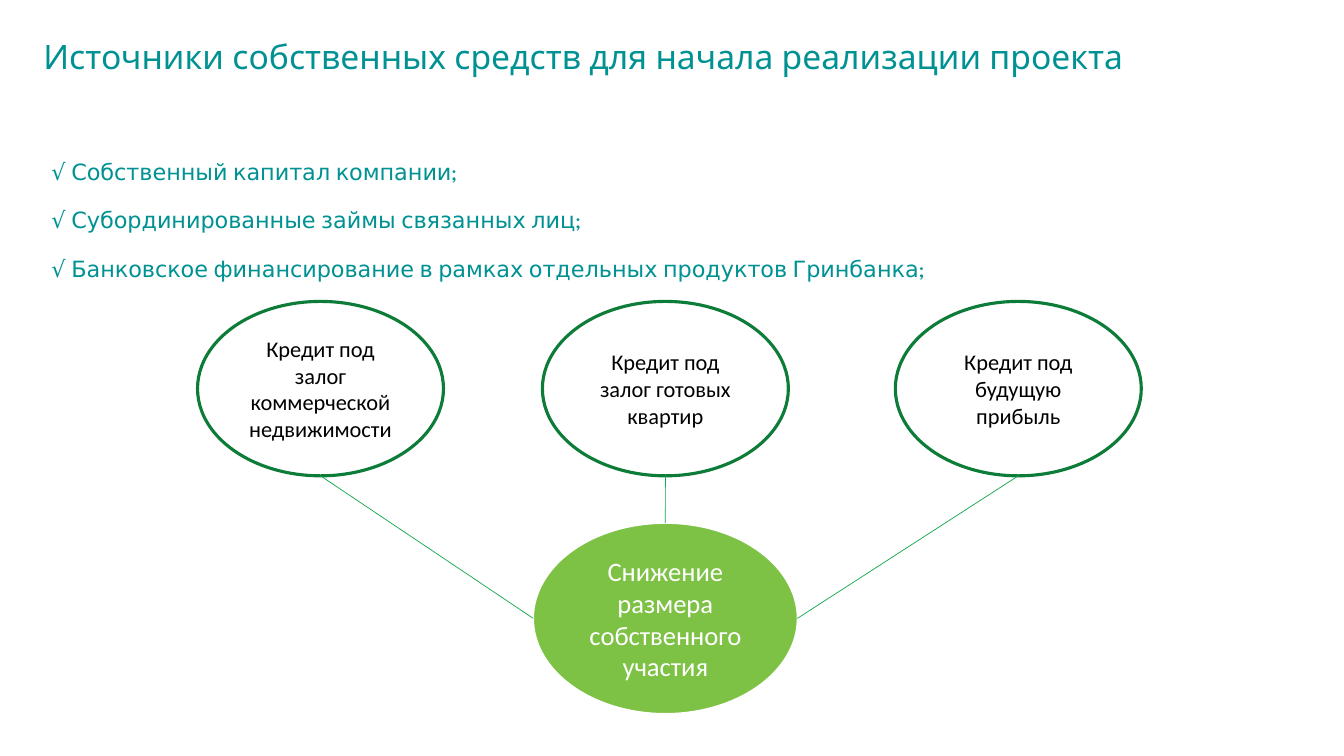
from dataclasses import dataclass

from lxml.etree import SubElement
from pptx import Presentation
from pptx.dml.color import RGBColor
from pptx.enum.shapes import MSO_CONNECTOR, MSO_SHAPE
from pptx.enum.text import MSO_ANCHOR, MSO_AUTO_SIZE, PP_ALIGN
from pptx.oxml.ns import qn
from pptx.util import Inches, Pt

HUES = {"teal": "009193", "leaf": "7DC244", "pine": "0D7C38",
        "line": "11A74C", "white": "FFFFFF", "black": "000000"}
HEAD, BODY = "League Spartan", "Calibri"

deck = Presentation()
deck.slide_width, deck.slide_height = Inches(13.33), Inches(7.5)
slide = deck.slides.add_slide(deck.slide_layouts[1])

# Grid of 100 columns by 100 rows
COL, ROW = deck.slide_width / 100, deck.slide_height / 100


@dataclass
class Box:
    x: float
    y: float
    w: float
    h: float

    @property
    def mid(self) -> float:
        return self.x + self.w / 2

    @property
    def low(self) -> float:
        return self.y + self.h

    def span(self) -> tuple[int, int, int, int]:
        return (round(self.x * COL), round(self.y * ROW),
                round(self.w * COL), round(self.h * ROW))


@dataclass
class Oval:
    box: Box
    text: str
    size: float = 16
    fill: str = "white"
    edge: str = "pine"
    width: float = 2.25
    ink: str = "black"


def hue(name: str) -> RGBColor:
    return RGBColor.from_string(HUES[name])


def style(para, size: float, face: str, ink: str, align) -> None:
    para.alignment = align
    para.font.size, para.font.name = Pt(size), face
    para.font.color.rgb = hue(ink)


def fill_holder(shape, box: Box, lines: list[str], size: float, gap: float) -> None:
    shape.left, shape.top, shape.width, shape.height = box.span()
    frame = shape.text_frame
    frame.text = "\n".join(lines)
    frame.word_wrap, frame.auto_size = True, MSO_AUTO_SIZE.NONE
    frame.vertical_anchor = MSO_ANCHOR.MIDDLE
    for i, para in enumerate(frame.paragraphs):
        para.line_spacing = 0.9
        para.space_before, para.space_after = Pt(gap if i else 0), Pt(0)
        props = para._p.get_or_add_pPr()
        props.set("marL", "0")
        props.set("indent", "0")
        SubElement(props, qn("a:buNone"))
        style(para, size, HEAD, "teal", PP_ALIGN.LEFT)


def draw_oval(oval: Oval) -> None:
    shape = slide.shapes.add_shape(MSO_SHAPE.OVAL, *oval.box.span())
    shape.shadow.inherit = False
    shape.fill.solid()
    shape.fill.fore_color.rgb = hue(oval.fill)
    shape.line.color.rgb, shape.line.width = hue(oval.edge), Pt(oval.width)
    frame = shape.text_frame
    frame.text, frame.word_wrap = oval.text, True
    frame.vertical_anchor = MSO_ANCHOR.MIDDLE
    style(frame.paragraphs[0], oval.size, BODY, oval.ink, PP_ALIGN.CENTER)


def draw_link(x1: float, y1: float, x2: float, y2: float) -> None:
    link = slide.shapes.add_connector(
        MSO_CONNECTOR.STRAIGHT, round(x1 * COL), round(y1 * ROW),
        round(x2 * COL), round(y2 * ROW))
    link.line.color.rgb, link.line.width = hue("line"), Pt(0.5)
    SubElement(link._element.spPr, qn("a:effectLst"))


# Title and list of sources
fill_holder(slide.shapes.title, Box(2.48, 1.6, 97.5, 12.27),
            ["Источники собственных средств для начала реализации проекта"], 24, 0)
fill_holder(slide.placeholders[1], Box(3.08, 14.13, 88.22, 30.4), [
    "√ Собственный капитал компании;",
    "√ Субординированные займы связанных лиц;",
    "√ Банковское финансирование в рамках отдельных продуктов Гринбанка;",
], 16, 17.3)

# Result and the three loans
goal = Oval(Box(39.68, 69.2, 19.65, 25.2), "Снижение размера собственного участия",
            19, "leaf", "white", 1, "white")
loans = [Oval(Box(x, 39.87, 18.3, 23.07), text) for x, text in (
    (14.7, "Кредит под залог коммерческой недвижимости"),
    (40.36, "Кредит под залог готовых квартир"),
    (66.62, "Кредит под будущую прибыль"))]
for oval in (goal, *loans):
    draw_oval(oval)

# Links from each loan to the left, top and right of the result
hub = goal.box
half = hub.y + hub.h / 2
ends = ((hub.x, half), (hub.mid, hub.y), (hub.x + hub.w, half))
for loan, end in zip(loans, ends):
    draw_link(loan.box.mid, loan.box.low, *end)

deck.save("out.pptx")
